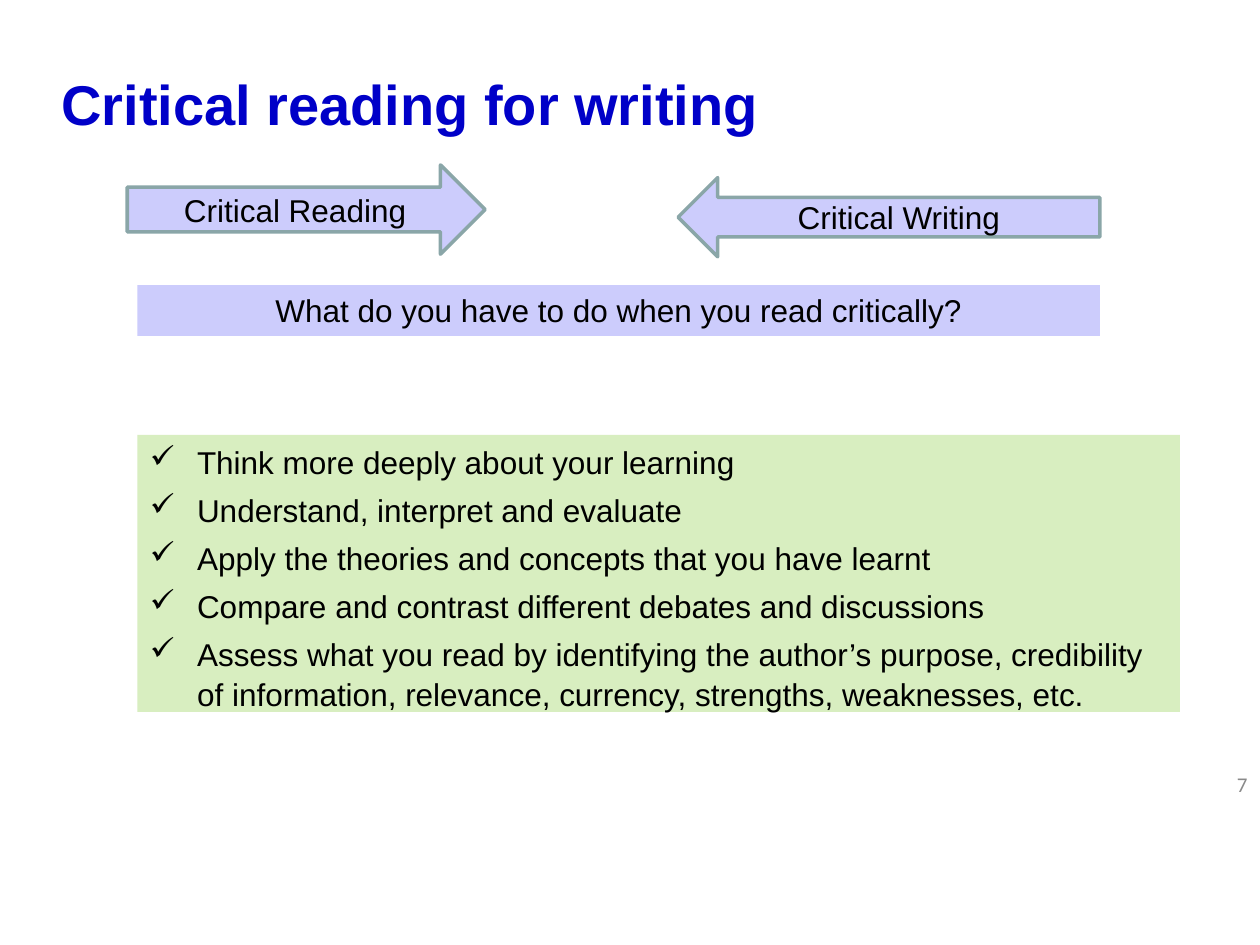
import pptx
import pptx.util
import pptx.dml.color
import pptx.enum.shapes
import pptx.enum.text
import pptx.oxml.ns
from lxml import etree

Pt = pptx.util.Pt
SHAPE = pptx.enum.shapes.MSO_SHAPE
ALIGN = pptx.enum.text.PP_ALIGN
ANCHOR = pptx.enum.text.MSO_ANCHOR

COLORS = {
    "title": "0000C8",
    "text": "000000",
    "number": "898989",
    "lilac": "CCCCFC",
    "green": "D8EEC0",
    "outline": "8AA6A8",
}

# Places are left, top, width, height in points.
TITLE = ("Critical reading for writing", (28, 33, 650, 46))
PAGE_NUMBER = ("7", (552, 433.5, 168, 29))
ARROWS = [
    ("Critical Reading", SHAPE.RIGHT_ARROW, (72.75, 94.25, 204.5, 51)),
    ("Critical Writing", SHAPE.LEFT_ARROW, (387.5, 101.5, 241, 45.25)),
]
QUESTION = ("What do you have to do when you read critically?",
            (78.5, 162.9, 550, 29.1))
ANSWERS = [
    "Think more deeply about your learning",
    "Understand, interpret and evaluate",
    "Apply the theories and concepts that you have learnt",
    "Compare and contrast different debates and discussions",
    "Assess what you read by identifying the author’s purpose, credibility "
    "of information, relevance, currency, strengths, weaknesses, etc.",
]
ANSWERS_PLACE = (78.5, 248.5, 595.75, 158.4)
BULLET_INDENT = 27


def color(name):
    return pptx.dml.color.RGBColor.from_string(COLORS[name])


def add_filled(page, kind, place, fill, outlined=False):
    shape = page.shapes.add_shape(kind, *map(Pt, place))
    shape.shadow.inherit = False
    shape.fill.solid()
    shape.fill.fore_color.rgb = color(fill)
    if outlined:
        shape.line.color.rgb = color("outline")
        shape.line.width = Pt(2)
    else:
        shape.line.fill.background()
    return shape


def write(box, lines, align=ALIGN.LEFT, anchor=ANCHOR.TOP, size=18,
          ink="text", font="Arial", bold=False, spacing=None, bullet=None):
    frame = box.text_frame
    frame.word_wrap = True
    frame.vertical_anchor = anchor
    for index, line in enumerate(lines):
        para = frame.add_paragraph() if index else frame.paragraphs[0]
        para.text = line
        para.alignment = align
        if spacing:
            para.line_spacing = spacing
        if index:
            para.space_before = Pt(4.8)
        if bullet:
            add_bullet(para, bullet)
        para.font.name = font
        para.font.size = Pt(size)
        para.font.bold = bold
        para.font.color.rgb = color(ink)


def add_bullet(para, mark):
    properties = para._p.get_or_add_pPr()
    properties.set("marL", str(Pt(BULLET_INDENT)))
    properties.set("indent", str(-Pt(BULLET_INDENT)))
    bullet = etree.SubElement(properties, pptx.oxml.ns.qn("a:buChar"))
    bullet.set("char", mark)


def main():
    deck = pptx.Presentation()
    deck.slide_width, deck.slide_height = Pt(720), Pt(540)
    page = deck.slides.add_slide(deck.slide_layouts[6])

    text, place = PAGE_NUMBER
    write(page.shapes.add_textbox(*map(Pt, place)), [text], ALIGN.RIGHT,
          ANCHOR.MIDDLE, size=12, ink="number", font="Calibri")

    text, place = TITLE
    write(page.shapes.add_textbox(*map(Pt, place)), [text],
          size=32, ink="title", bold=True, spacing=1.08)

    for text, kind, place in ARROWS:
        arrow = add_filled(page, kind, place, "lilac", outlined=True)
        write(arrow, [text], ALIGN.CENTER, ANCHOR.MIDDLE)

    text, place = QUESTION
    question = add_filled(page, SHAPE.RECTANGLE, place, "lilac")
    write(question, [text], ALIGN.CENTER)

    answers = add_filled(page, SHAPE.RECTANGLE, ANSWERS_PLACE, "green")
    write(answers, ANSWERS, spacing=1.05, bullet="✓")

    deck.save("out.pptx")


if __name__ == "__main__":
    main()
